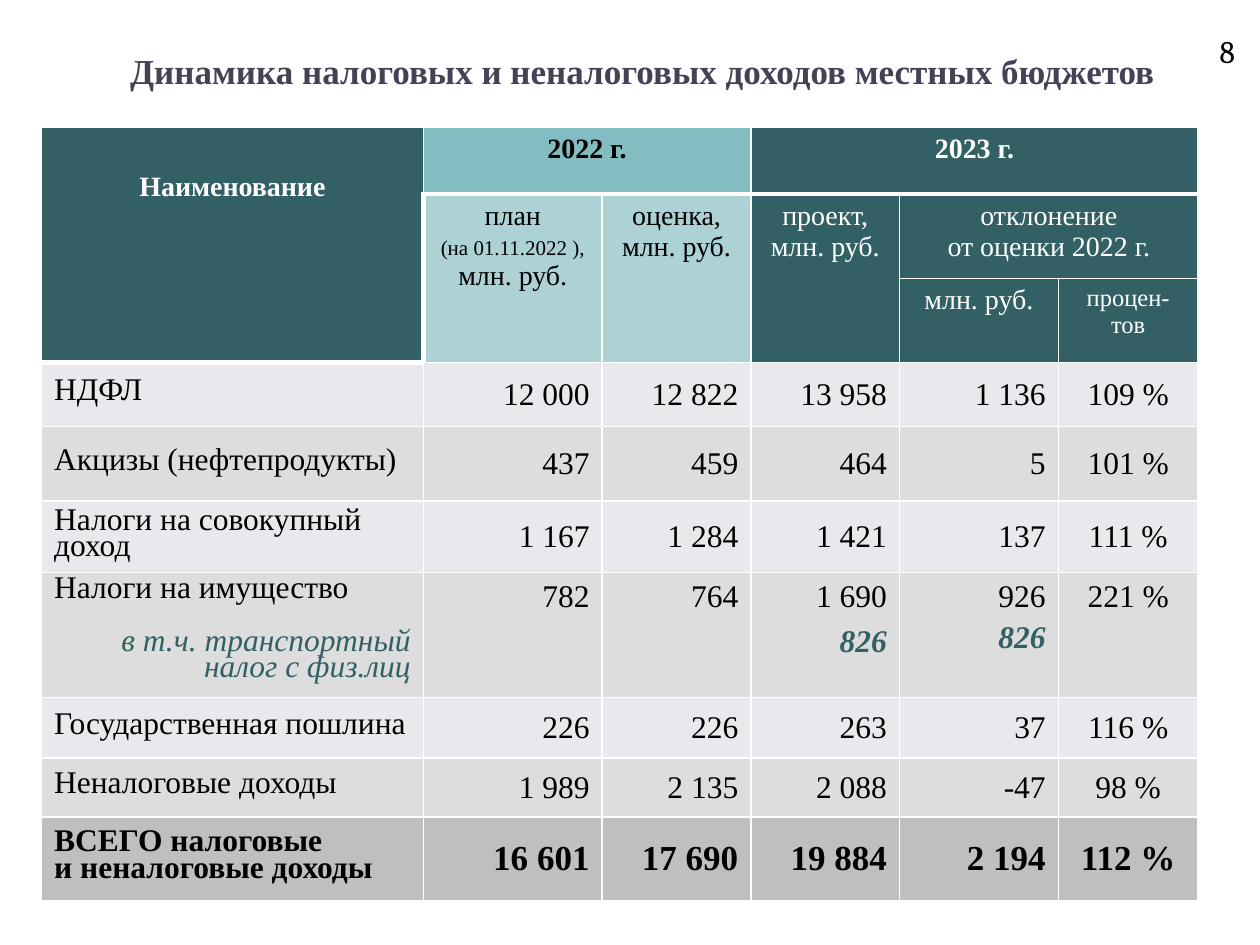
from lxml import etree
from pptx import Presentation
from pptx.dml.color import RGBColor
from pptx.enum.text import MSO_ANCHOR, PP_ALIGN
from pptx.oxml.ns import qn
from pptx.util import Inches, Pt

LEFT, CENTER, RIGHT = PP_ALIGN.LEFT, PP_ALIGN.CENTER, PP_ALIGN.RIGHT
TOP, MIDDLE, BOTTOM = MSO_ANCHOR.TOP, MSO_ANCHOR.MIDDLE, MSO_ANCHOR.BOTTOM

WHITE = RGBColor(0xFF, 0xFF, 0xFF)
BLACK = RGBColor(0x00, 0x00, 0x00)
SLATE = RGBColor(0x42, 0x44, 0x56)
TEAL = RGBColor(0x32, 0x60, 0x65)
AQUA = RGBColor(0x83, 0xBC, 0xC1)
PALE_AQUA = RGBColor(0xAD, 0xD2, 0xD6)
LILAC_GREY = RGBColor(0xE9, 0xE9, 0xED)
LIGHT_GREY = RGBColor(0xDD, 0xDD, 0xDD)
TOTAL_GREY = RGBColor(0xBF, 0xBF, 0xBF)

SLIDE_WIDTH, SLIDE_HEIGHT = Inches(10), Inches(7.5)
TEXT_FONT, NUMBER_FONT = "Times New Roman", "Cambria"
COLUMNS = [3.03, 1.42, 1.18, 1.18, 1.26, 1.11]
ROWS = [0.53, 0.67, 0.64, 0.51, 0.59, 0.57, 0.99, 0.48, 0.47, 0.66]
HEADER_ROWS = 3
NAME_LEADING = 15
THIN, HEAVY = 1, 3

INCOME = [
    ("НДФЛ", "12 000", "12 822", "13 958", "1 136", "109 %"),
    ("Акцизы (нефтепродукты)", "437", "459", "464", "5", "101 %"),
    ("Налоги на совокупный доход", "1 167", "1 284", "1 421", "137", "111 %"),
    ("Налоги на имущество", "782", "764", "1 690", "926", "221 %"),
    ("Государственная пошлина", "226", "226", "263", "37", "116 %"),
    ("Неналоговые доходы", "1 989", "2 135", "2 088", "-47", "98 %"),
]
TOTAL = ("ВСЕГО налоговые", "16 601", "17 690", "19 884", "2 194", "112 %")
PROPERTY_TAX = 3


def add_run(paragraph, text, size, color=BLACK, bold=False, italic=False,
            font=TEXT_FONT):
    run = paragraph.add_run()
    run.text = text
    run.font.name, run.font.size = font, Pt(size)
    run.font.bold, run.font.italic = bold, italic
    run.font.color.rgb = color


def write_line(frame, runs, align=LEFT, before=0, leading=None):
    """Fill the first paragraph while it is empty, otherwise append one."""
    first = frame.paragraphs[0]
    paragraph = frame.add_paragraph() if first.runs else first
    paragraph.alignment = align
    paragraph.space_before = Pt(before)
    if leading:
        paragraph.line_spacing = Pt(leading)
    for text, style in runs:
        add_run(paragraph, text, **style)


def add_label(slide, text, shares, align, anchor, **style):
    """Place a text box given as shares of the slide's width and height."""
    left, top, width, height = shares
    box = slide.shapes.add_textbox(
        int(SLIDE_WIDTH * left), int(SLIDE_HEIGHT * top),
        int(SLIDE_WIDTH * width), int(SLIDE_HEIGHT * height))
    frame = box.text_frame
    frame.word_wrap = True
    frame.vertical_anchor = anchor
    write_line(frame, [(text, style)], align)


def edge_widths(row, column):
    """Left, right, top and bottom border widths of a cell."""
    left = HEAVY if column == 1 and row in (1, 2) else THIN
    top = HEAVY if (row == 1 and column) or (row, column) == (3, 0) else THIN
    heavy_bottom = row == 0 or (row, column) == (2, 0)
    return left, THIN, top, HEAVY if heavy_bottom else THIN


def draw_borders(cell, widths):
    properties = cell._tc.get_or_add_tcPr()
    for side, width in zip("LRTB", widths):
        line = etree.SubElement(properties, qn(f"a:ln{side}"), w=str(Pt(width)))
        fill = etree.SubElement(line, qn("a:solidFill"))
        etree.SubElement(fill, qn("a:srgbClr"), val=str(WHITE))


def paint(cell, color):
    cell.fill.solid()
    cell.fill.fore_color.rgb = color


def header_color(row, column):
    if column in (1, 2):
        return PALE_AQUA if row else AQUA
    return TEAL


def add_grid(slide):
    table = slide.shapes.add_table(
        len(ROWS), len(COLUMNS), Inches(0.33), Inches(1.01),
        Inches(sum(COLUMNS)), Inches(sum(ROWS))).table
    for column, width in zip(table.columns, COLUMNS):
        column.width = Inches(width)
    for row, height in zip(table.rows, ROWS):
        row.height = Inches(height)
    for row in range(len(ROWS)):
        for column in range(len(COLUMNS)):
            draw_borders(table.cell(row, column), edge_widths(row, column))
    return table


def fill_header(table):
    for row in range(HEADER_ROWS):
        for column in range(len(COLUMNS)):
            paint(table.cell(row, column), header_color(row, column))
    spans = [((0, 0), (2, 0)), ((0, 1), (0, 2)), ((0, 3), (0, 5)),
             ((1, 1), (2, 1)), ((1, 2), (2, 2)), ((1, 3), (2, 3)),
             ((1, 4), (1, 5))]
    for start, end in spans:
        table.cell(*start).merge(table.cell(*end))
    table.cell(0, 0).margin_top = Inches(0.35)

    headings = [
        (0, 0, "Наименование", 16, True),
        (0, 1, "2022 г.", 16, True),
        (0, 3, "2023 г.", 16, True),
        (1, 1, "план", 16, False),
        (1, 2, "оценка, млн. руб.", 16, False),
        (1, 3, "проект, млн. руб.", 16, False),
        (1, 4, "отклонение", 16, False),
        (1, 4, "от оценки 2022 г.", 16, False),
        (2, 4, "млн. руб.", 16, False),
        (2, 5, "процен-тов", 14, False),
    ]
    for row, column, text, size, bold in headings:
        color = BLACK if column in (1, 2) else WHITE
        style = {"size": size, "color": color, "bold": bold}
        write_line(table.cell(row, column).text_frame, [(text, style)], CENTER)
    plan_date = [("(на 01.11.2022 ), ", {"size": 12}),
                 ("млн. руб.", {"size": 16})]
    write_line(table.cell(1, 1).text_frame, plan_date, CENTER, before=3.2)


def fill_row(table, row, values, color, anchor=MIDDLE, size=18, bold=False):
    for column, text in enumerate(values):
        cell = table.cell(row, column)
        cell.vertical_anchor = anchor
        paint(cell, color)
        if column == 0:
            write_line(cell.text_frame, [(text, {"size": 18, "bold": bold})],
                       leading=NAME_LEADING)
        else:
            align = CENTER if column == len(COLUMNS) - 1 else RIGHT
            write_line(cell.text_frame, [(text, {"size": size, "bold": bold})],
                       align)


def add_transport_tax(table, row):
    style = {"size": 18, "color": TEAL, "italic": True}
    write_line(table.cell(row, 0).text_frame,
               [("в т.ч. транспортный налог с физ.лиц", style)], RIGHT,
               before=NAME_LEADING, leading=NAME_LEADING)
    for column, before in ((3, 6), (4, 3.6)):
        write_line(table.cell(row, column).text_frame,
                   [("826", {**style, "bold": True})], RIGHT, before)


def main():
    deck = Presentation()
    deck.slide_width, deck.slide_height = SLIDE_WIDTH, SLIDE_HEIGHT
    slide = deck.slides.add_slide(deck.slide_layouts[6])

    add_label(slide, "Динамика налоговых и неналоговых доходов местных бюджетов",
              (0.02, 0.04, 0.98, 0.07), CENTER, MIDDLE,
              size=20, color=SLATE, bold=True)
    table = add_grid(slide)
    fill_header(table)
    for index, values in enumerate(INCOME):
        fill_row(table, HEADER_ROWS + index, values,
                 LIGHT_GREY if index % 2 else LILAC_GREY,
                 TOP if index == PROPERTY_TAX else MIDDLE)
    add_transport_tax(table, HEADER_ROWS + PROPERTY_TAX)

    total_row = len(ROWS) - 1
    fill_row(table, total_row, TOTAL, TOTAL_GREY, size=20, bold=True)
    write_line(table.cell(total_row, 0).text_frame,
               [("и неналоговые доходы", {"size": 18, "bold": True})],
               leading=NAME_LEADING)
    add_label(slide, "8", (0.76, 0.01, 0.23, 0.07), RIGHT, BOTTOM,
              size=18, font=NUMBER_FONT)
    deck.save("out.pptx")


if __name__ == "__main__":
    main()
